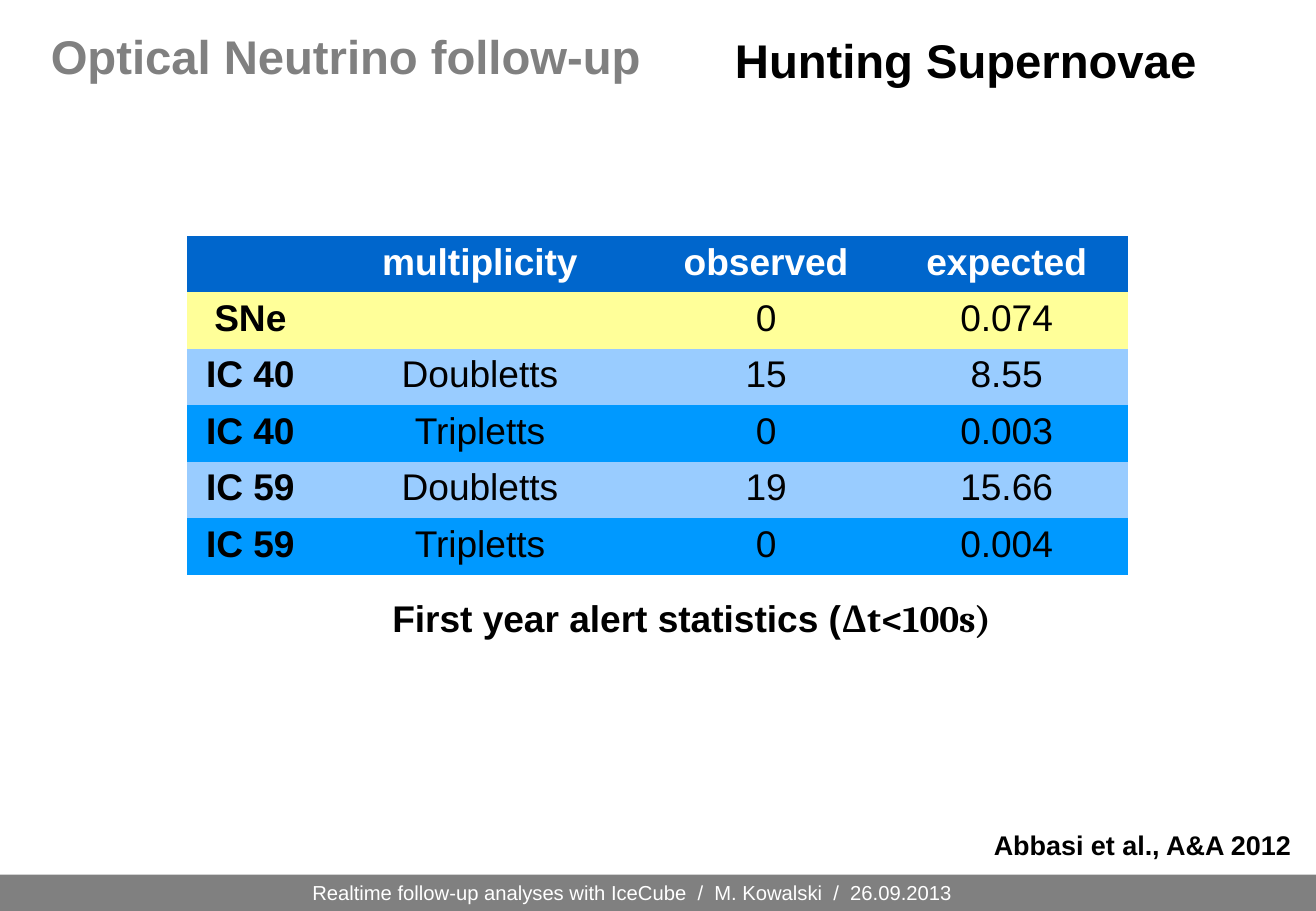
from dataclasses import dataclass

from lxml.etree import SubElement
from pptx import Presentation
from pptx.dml.color import RGBColor
from pptx.enum.shapes import MSO_SHAPE
from pptx.enum.text import MSO_ANCHOR, MSO_AUTO_SIZE, PP_ALIGN
from pptx.oxml.ns import qn
from pptx.util import Inches, Pt


@dataclass(frozen=True)
class Theme:
    font: str = "Arial"
    formula_font: str = "Cambria"
    heading_size: int = 28
    table_size: int = 22
    source_size: int = 16
    footer_size: int = 12
    black: str = "000000"
    white: str = "FFFFFF"
    grey: str = "808080"
    header_blue: str = "0066CC"
    yellow: str = "FFFF99"
    light_blue: str = "99CCFF"
    bright_blue: str = "0099FF"
    border_width: float = 0.03


THEME = Theme()

COLUMN_WIDTHS = (1.04, 2.74, 1.97, 1.99)
TABLE_ROWS = (
    (THEME.header_blue, ("", "multiplicity", "observed", "expected")),
    (THEME.yellow, ("SNe", "", "0", "0.074")),
    (THEME.light_blue, ("IC 40", "Doubletts", "15", "8.55")),
    (THEME.bright_blue, ("IC 40", "Tripletts", "0", "0.003")),
    (THEME.light_blue, ("IC 59", "Doubletts", "19", "15.66")),
    (THEME.bright_blue, ("IC 59", "Tripletts", "0", "0.004")),
)


def apply_format(target, values):
    for name, value in values.items():
        setattr(target, name, value)


def place(shape, left, top, width, height):
    box = {"left": left, "top": top, "width": width, "height": height}
    apply_format(shape, {name: Inches(value) for name, value in box.items()})


def fill_solid(target, color):
    target.fill.solid()
    target.fill.fore_color.rgb = RGBColor.from_string(color)


def add_run(paragraph, text, size, color, bold=True, font=THEME.font):
    run = paragraph.add_run()
    run.text = text
    apply_format(run.font, {"name": font, "size": Pt(size), "bold": bold})
    run.font.color.rgb = RGBColor.from_string(color)


def set_title(slide, text):
    title = slide.shapes.title
    place(title, 0, 0, 5.69, 0.92)
    fill_solid(title, THEME.white)
    title.text_frame.vertical_anchor = MSO_ANCHOR.MIDDLE
    paragraph = title.text_frame.paragraphs[0]
    paragraph.alignment = PP_ALIGN.CENTER
    add_run(paragraph, text, THEME.heading_size, THEME.grey)


def add_label(slide, box, runs, size, wrap=False):
    label = slide.shapes.add_textbox(*map(Inches, box))
    apply_format(label.text_frame, {
        "word_wrap": wrap,
        "auto_size": MSO_AUTO_SIZE.SHAPE_TO_FIT_TEXT,
    })
    for text, font in runs:
        add_run(label.text_frame.paragraphs[0], text, size, THEME.black, font=font)


def add_footer(slide, text):
    footer = slide.shapes.add_shape(
        MSO_SHAPE.RECTANGLE, *map(Inches, (0, 7.2, 10.83, 0.3)))
    footer.shadow.inherit = False
    fill_solid(footer, THEME.grey)
    footer.line.fill.background()
    apply_format(footer.text_frame, {
        "margin_left": Inches(2.57),
        "word_wrap": True,
        "vertical_anchor": MSO_ANCHOR.MIDDLE,
    })
    paragraph = footer.text_frame.paragraphs[0]
    paragraph.alignment = PP_ALIGN.LEFT
    add_run(paragraph, text, THEME.footer_size, THEME.white, bold=False)


def set_borders(cell):
    properties = cell._tc.get_or_add_tcPr()
    for position, side in enumerate(("a:lnL", "a:lnR", "a:lnT", "a:lnB")):
        line = SubElement(properties, qn(side), w=str(Pt(THEME.border_width)))
        fill = SubElement(line, qn("a:solidFill"))
        SubElement(fill, qn("a:srgbClr"), val=THEME.white)
        properties.insert(position, line)


def fill_cell(cell, text, color, text_color, bold):
    fill_solid(cell, color)
    set_borders(cell)
    apply_format(cell, {"margin_top": Inches(0.07), "margin_bottom": Inches(0.05)})
    if text:
        paragraph = cell.text_frame.paragraphs[0]
        apply_format(paragraph, {"alignment": PP_ALIGN.CENTER, "line_spacing": 0.93})
        add_run(paragraph, text, THEME.table_size, text_color, bold)


def add_alert_table(slide):
    frame = slide.shapes.add_table(
        len(TABLE_ROWS), len(COLUMN_WIDTHS),
        *map(Inches, (1.54, 1.94, sum(COLUMN_WIDTHS), 2.79)))
    table = frame.table
    table.horz_banding = False
    for column, width in zip(table.columns, COLUMN_WIDTHS):
        column.width = Inches(width)
    for row, (color, texts) in enumerate(TABLE_ROWS):
        is_header = row == 0
        text_color = THEME.white if is_header else THEME.black
        for column, text in enumerate(texts):
            fill_cell(table.cell(row, column), text, color, text_color,
                      bold=is_header or column == 0)


def main():
    presentation = Presentation()
    apply_format(presentation, {
        "slide_width": Inches(10.83), "slide_height": Inches(7.5)})
    slide = presentation.slides.add_slide(presentation.slide_layouts[5])
    add_footer(slide, "Realtime follow-up analyses with IceCube  /  M. Kowalski  /  26.09.2013")
    set_title(slide, "Optical Neutrino follow-up")
    add_label(slide, (5.95, 0.21, 4.04, 0.57),
              [("Hunting Supernovae", THEME.font)], THEME.heading_size)
    add_alert_table(slide)
    add_label(slide, (8.08, 6.77, 2.68, 0.37),
              [("Abbasi et al., A&A 2012", THEME.font)], THEME.source_size)
    add_label(slide, (3.13, 4.85, 5.42, 0.47),
              [("First year alert statistics (", THEME.font),
               ("Δt<100s)", THEME.formula_font)], THEME.table_size, wrap=True)
    presentation.save("out.pptx")


if __name__ == "__main__":
    main()
